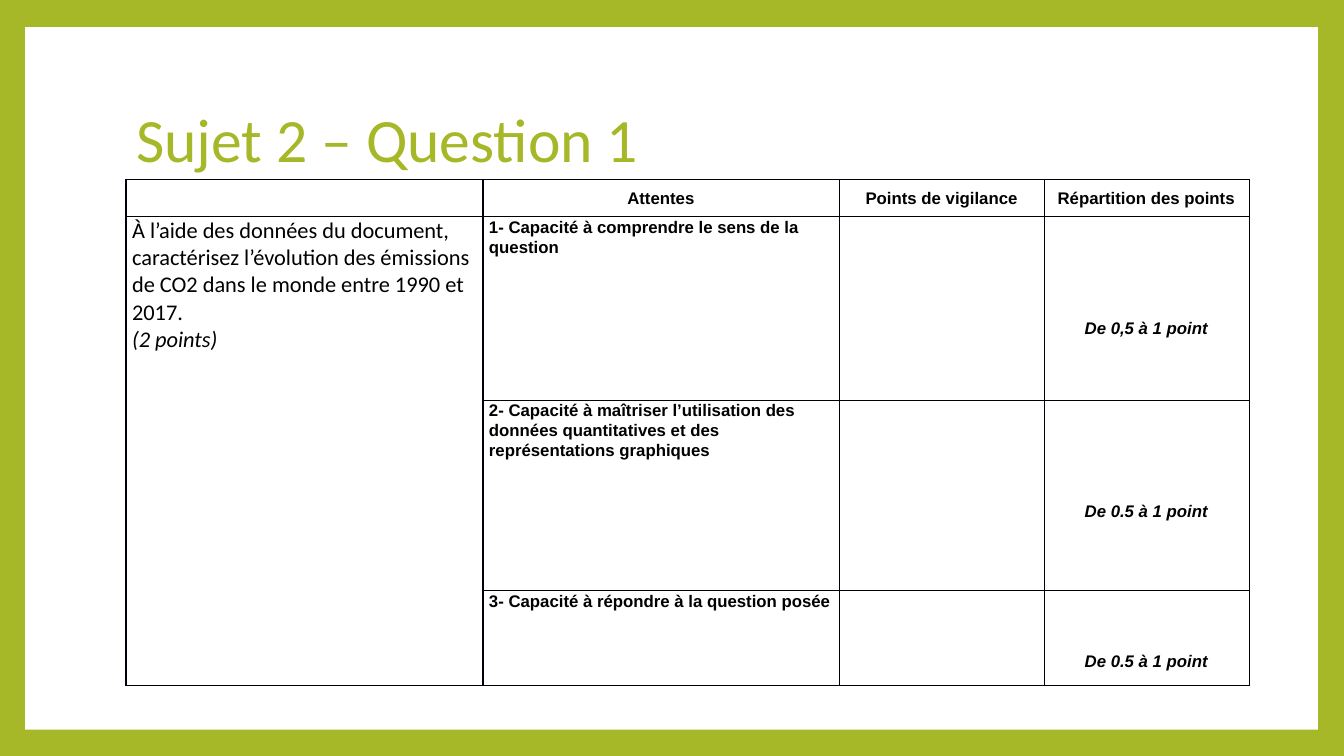
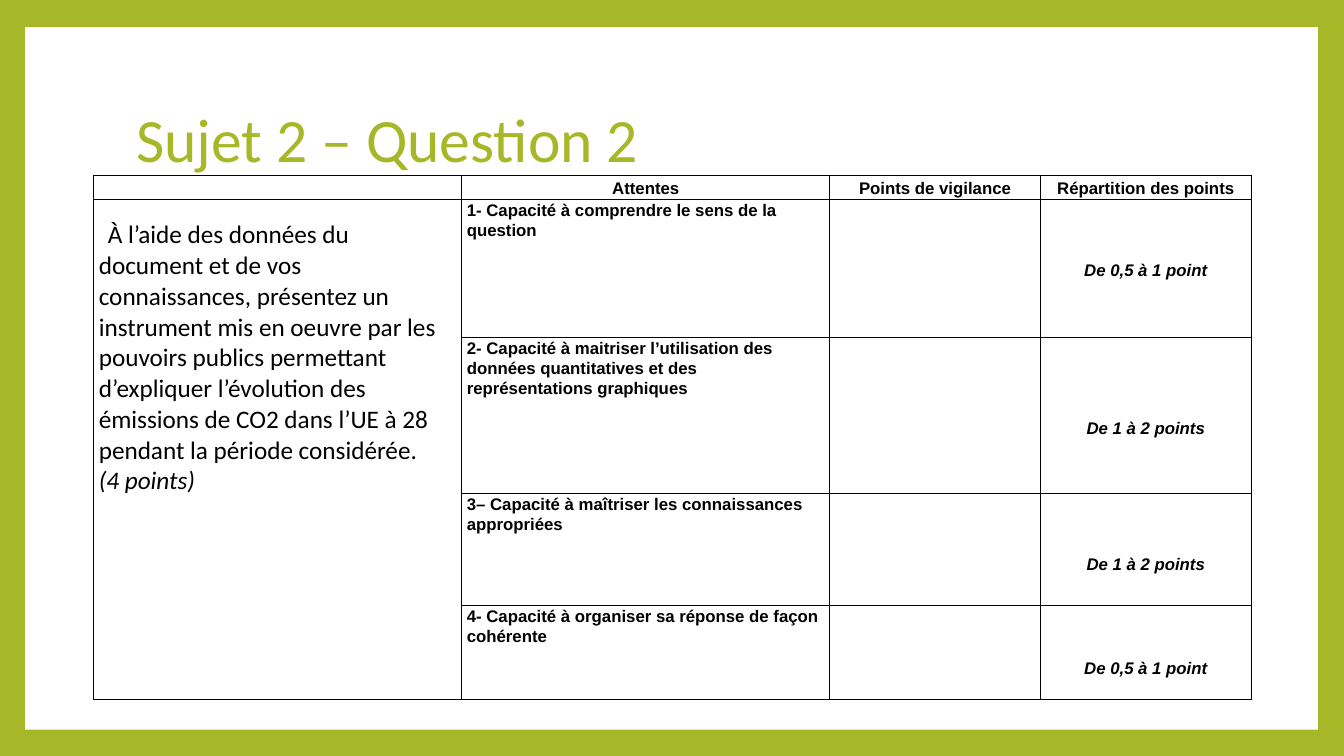
"""Build two grading-grid slides for the questions of an exam subject."""
from typing import NamedTuple

from pptx import Presentation
from pptx.dml import color
from pptx.enum import shapes, text
from pptx.oxml import ns, xmlchemy
from pptx.util import Inches, Pt

GREEN, WHITE, BLACK, EDGE = "A6B727", "FFFFFF", "000000", "00000A"
HEADS = ("Attentes", "Points de vigilance", "Répartition des points")
ALIGN, ANCHOR = text.PP_ALIGN, text.MSO_ANCHOR


class Font(NamedTuple):
    """Look of a run."""
    name: str
    size: float
    tint: str = BLACK
    bold: bool = False
    slant: bool = False


class Skill(NamedTuple):
    """One graded row: height, skill, drop of the mark and mark."""
    high: float
    label: str
    drop: float
    mark: str


class Grid(NamedTuple):
    """One slide: title, table place, question and skills."""
    title: str
    left: float
    top: float
    cols: tuple[float, ...]
    pads: tuple[float, float]
    head: float
    ask: str
    worth: str
    size: float
    drop: float
    indent: float
    skills: tuple[Skill, ...]


TITLE = Font("Calibri", 44, GREEN)
LABEL = Font("Arial", 12, bold=True)
MARK = LABEL._replace(slant=True)

GRIDS = (
    Grid("Sujet 2 – Question 1", 1.25, 1.78, (3.54, 3.54, 2.03, 2.03),
         (0.06, 0.07), 0.37,
         "À l’aide des données du document, caractérisez l’évolution des "
         "émissions de CO2 dans le monde entre 1990 et 2017.",
         "(2 points)", 16, 0, 0, (
             Skill(1.82, "1- Capacité à comprendre le sens de la question",
                   1, "De 0,5 à 1 point"),
             Skill(1.89, "2- Capacité à maîtriser l’utilisation des données "
                   "quantitatives et des représentations graphiques",
                   1, "De 0.5 à 1 point"),
             Skill(0.94, "3- Capacité à répondre à la question posée",
                   0.6, "De 0.5 à 1 point"))),
    Grid("Sujet 2 – Question 2", 0.93, 1.74, (3.65, 3.65, 2.09, 2.09),
         (0.05, 0.05), 0.24,
         "À l’aide des données du document et de vos connaissances, présentez "
         "un instrument mis en oeuvre par les pouvoirs publics permettant "
         "d’expliquer l’évolution des émissions de CO2 dans l’UE à 28 "
         "pendant la période considérée.",
         "(4 points)", 18, 0.2, 0.09, (
             Skill(1.37, "1- Capacité à comprendre le sens de la question",
                   0.6, "De 0,5 à 1 point"),
             Skill(1.55, "2- Capacité à maitriser l’utilisation des données "
                   "quantitatives et des représentations graphiques",
                   0.8, "De 1 à 2 points"),
             Skill(1.11, "3– Capacité à maîtriser les connaissances "
                   "appropriées", 0.6, "De 1 à 2 points"),
             Skill(0.93, "4- Capacité à organiser sa réponse de façon "
                   "cohérente", 0.52, "De 0,5 à 1 point"))),
)


def paint(fill, tint: str) -> None:
    """Give a fill one solid colour."""
    fill.solid()
    fill.fore_color.rgb = color.RGBColor.from_string(tint)


def write(para, words: str, font: Font, align=ALIGN.LEFT,
          lead: float = 1.07) -> None:
    """Add one formatted run to a paragraph."""
    para.alignment, para.line_spacing = align, lead
    run = para.add_run()
    run.text = words
    face = run.font
    face.name, face.size = font.name, Pt(font.size)
    face.bold, face.italic = font.bold, font.slant
    paint(face.fill, font.tint)


def border(cell) -> None:
    """Draw the four edges of a cell and leave it unfilled."""
    props = cell._tc.get_or_add_tcPr()
    for side in ("a:lnL", "a:lnR", "a:lnT", "a:lnB"):
        line = xmlchemy.OxmlElement(side)
        line.set("w", str(Pt(1)))
        solid = xmlchemy.OxmlElement("a:solidFill")
        tint = xmlchemy.OxmlElement("a:srgbClr")
        tint.set("val", EDGE)
        solid.append(tint)
        line.append(solid)
        props.append(line)
    cell.fill.background()


def frame(deck, layout, slide) -> None:
    """Set the green ground, the white panel and the title place."""
    paint(deck.slide_master.background.fill, GREEN)
    panel = slide.shapes.add_shape(
        shapes.MSO_SHAPE.RECTANGLE,
        Inches(0.25), Inches(0.27), Inches(12.82), Inches(6.97))
    panel.shadow.inherit = False
    paint(panel.fill, WHITE)
    panel.line.fill.background()
    layout.shapes._spTree.insert(2, panel._element)


def ask(cell, grid: Grid) -> None:
    """Write the question and its worth."""
    cell.margin_top = Inches(grid.drop)
    body = cell.text_frame
    font = Font("Calibri", grid.size)
    first = body.paragraphs[0]
    write(first, grid.ask, font, lead=1.0)
    first._p.get_or_add_pPr().set("indent", str(Inches(grid.indent)))
    write(body.add_paragraph(), grid.worth, font._replace(slant=True), lead=1.0)


def draw(slide, grid: Grid) -> None:
    """Draw the title and the grading table of one slide."""
    title = slide.shapes.title
    title.left, title.top = Inches(1.25), Inches(0.67)
    title.width, title.height = Inches(10.8), Inches(1.48)
    title.text_frame.vertical_anchor = ANCHOR.MIDDLE
    write(title.text_frame.paragraphs[0], grid.title, TITLE, lead=0.9)

    highs = [grid.head, *(skill.high for skill in grid.skills)]
    table = slide.shapes.add_table(
        len(highs), len(grid.cols), Inches(grid.left), Inches(grid.top),
        Inches(sum(grid.cols)), Inches(sum(highs))).table
    table.first_row = table.horz_banding = False
    for col, wide in zip(table.columns, grid.cols):
        col.width = Inches(wide)
    for row, high in zip(table.rows, highs):
        row.height = Inches(high)
    for cell in table.iter_cells():
        border(cell)
        cell.margin_left, cell.margin_right = map(Inches, grid.pads)
        cell.margin_top = cell.margin_bottom = 0
        end = cell.text_frame.paragraphs[0]._p
        mark = end.makeelement(ns.qn("a:endParaRPr"), {"sz": "1200"})
        end.append(mark)

    for col, words in enumerate(HEADS, 1):
        cell = table.cell(0, col)
        cell.vertical_anchor = ANCHOR.MIDDLE
        write(cell.text_frame.paragraphs[0], words, LABEL, ALIGN.CENTER)
    table.cell(1, 0).merge(table.cell(len(grid.skills), 0))
    ask(table.cell(1, 0), grid)
    for row, skill in enumerate(grid.skills, 1):
        write(table.cell(row, 1).text_frame.paragraphs[0], skill.label, LABEL)
        cell = table.cell(row, 3)
        cell.margin_top = Inches(skill.drop)
        write(cell.text_frame.paragraphs[0], skill.mark, MARK, ALIGN.CENTER)


def main() -> None:
    """Build and save the deck."""
    deck = Presentation()
    deck.slide_width, deck.slide_height = Inches(13.33), Inches(7.5)
    layout = deck.slide_layouts.get_by_name("Title Only")
    for num, grid in enumerate(GRIDS):
        slide = deck.slides.add_slide(layout)
        if num == 0:
            frame(deck, layout, slide)
        draw(slide, grid)
    deck.save("out.pptx")


if __name__ == "__main__":
    main()
